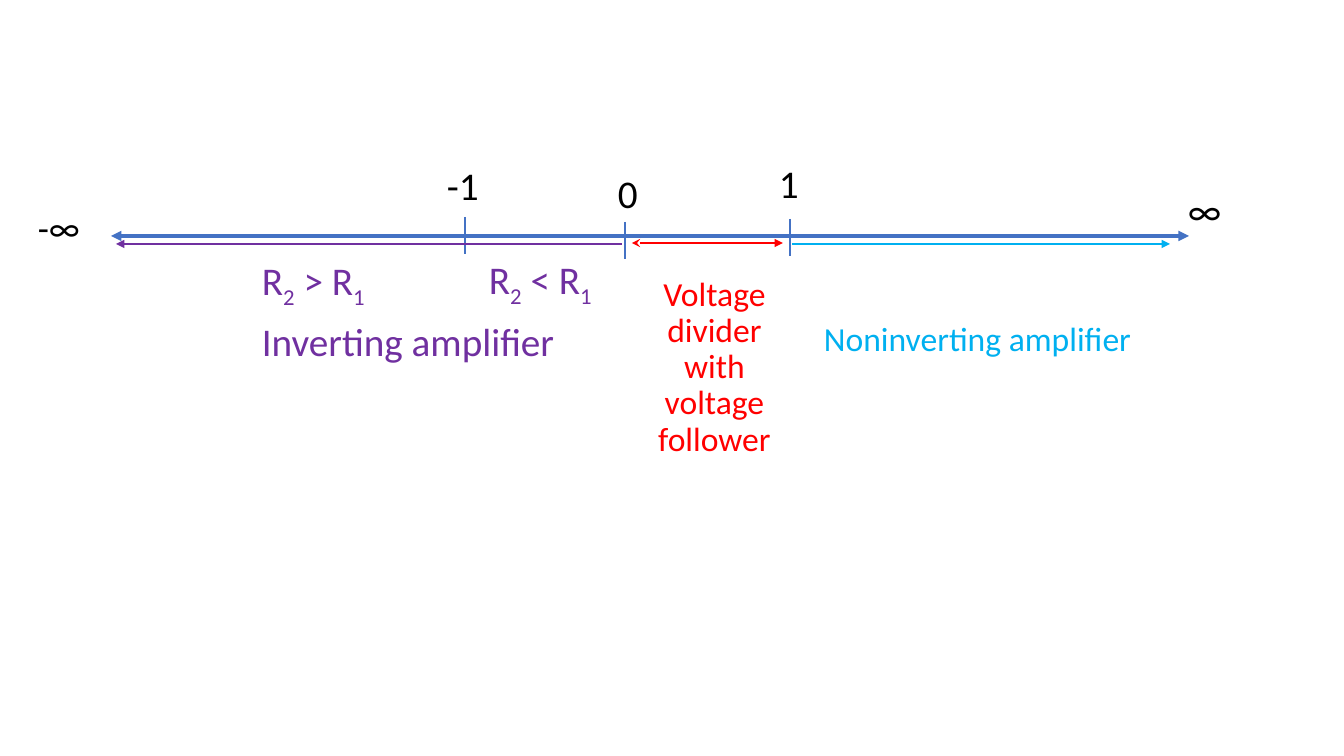
from lxml.etree import SubElement
from pptx import Presentation
from pptx.dml.color import RGBColor
from pptx.enum.shapes import MSO_CONNECTOR as Connector
from pptx.enum.text import PP_ALIGN as Align
from pptx.oxml.ns import qn
from pptx.util import Pt

PX = 12192000 / 1344  # EMU in one px


class Theme:
    font = "Calibri"
    axis = "4472C4"
    ink = "000000"
    inverting = "7030A0"
    divider = "FF0000"
    noninverting = "00B0F0"
    large, medium, fitted = 28, 24, 25.9
    axis_width, range_width, tick_width = 2.5, 1.5, 1.25


presentation = Presentation()
presentation.slide_width = round(1344 * PX)
presentation.slide_height = round(756 * PX)
slide = presentation.slides.add_slide(presentation.slide_layouts[6])


def add_text(text, box, color=Theme.ink, size=Theme.large, align=None):
    """Add a text box; the character after each underscore is a subscript."""
    shape = slide.shapes.add_textbox(*(round(value * PX) for value in box))
    shape.text_frame.word_wrap = True
    paragraph = shape.text_frame.paragraphs[0]
    paragraph.alignment = align
    paragraph.line_spacing = 0.9
    paragraph.space_before = Pt(10)
    first, *rest = text.split("_")
    pieces = [(first, False)]
    for part in rest:
        pieces += [(part[0], True), (part[1:], False)]
    for piece, subscript in pieces:
        if not piece:
            continue
        run = paragraph.add_run()
        run.text = piece
        run.font.name = Theme.font
        run.font.size = Pt(size)
        run.font.color.rgb = RGBColor.from_string(color)
        if subscript:
            run._r.get_or_add_rPr().set("baseline", "-25000")


def add_line(start, end, color, width, head=None, tail=None):
    points = [round(value * PX) for value in (*start, *end)]
    line = slide.shapes.add_connector(Connector.STRAIGHT, *points)
    line.line.color.rgb = RGBColor.from_string(color)
    line.line.width = Pt(width)
    outline = line.line._get_or_add_ln()
    for tag, arrow in (("a:headEnd", head), ("a:tailEnd", tail)):
        if arrow:
            SubElement(outline, qn(tag), type=arrow)
    SubElement(line._element.spPr, qn("a:effectLst"))


# Gain axis with its two ends
add_line((111, 236), (1189, 236), Theme.axis, Theme.axis_width,
         head="triangle", tail="triangle")
add_text("-∞", (28, 205, 62, 54), size=Theme.fitted)
add_text("∞", (1178, 187, 62, 54))

# Ticks and their numbers
for number, tick_x, tick_y, label_x, label_y in (
    ("-1", 465, 217, 437, 162),
    ("0", 625, 222, 608, 170),
    ("1", 790, 219, 769, 160),
):
    add_line((tick_x, tick_y), (tick_x, tick_y + 37), Theme.axis, Theme.tick_width)
    add_text(number, (label_x, label_y, 62, 54))

# Range arrows below the axis
for start_x, end_x, y, color, head in (
    (622, 116, 244, Theme.inverting, None),
    (792, 1170, 244, Theme.noninverting, None),
    (632, 783, 243, Theme.divider, "stealth"),
):
    add_line((start_x, y), (end_x, y), color, Theme.range_width,
             head=head, tail="triangle")

# Circuit for each range
add_text("R_2 > R_1", (252, 252, 146, 72), color=Theme.inverting)
add_text("R_2 < R_1", (479, 251, 146, 72), color=Theme.inverting)
add_text("Inverting amplifier", (252, 318, 317, 60), color=Theme.inverting)
add_text("Voltage divider with voltage follower", (632, 272, 165, 201),
         color=Theme.divider, size=Theme.medium, align=Align.CENTER)
add_text("Noninverting amplifier", (814, 318, 363, 60),
         color=Theme.noninverting, size=Theme.medium)

presentation.save("out.pptx")
